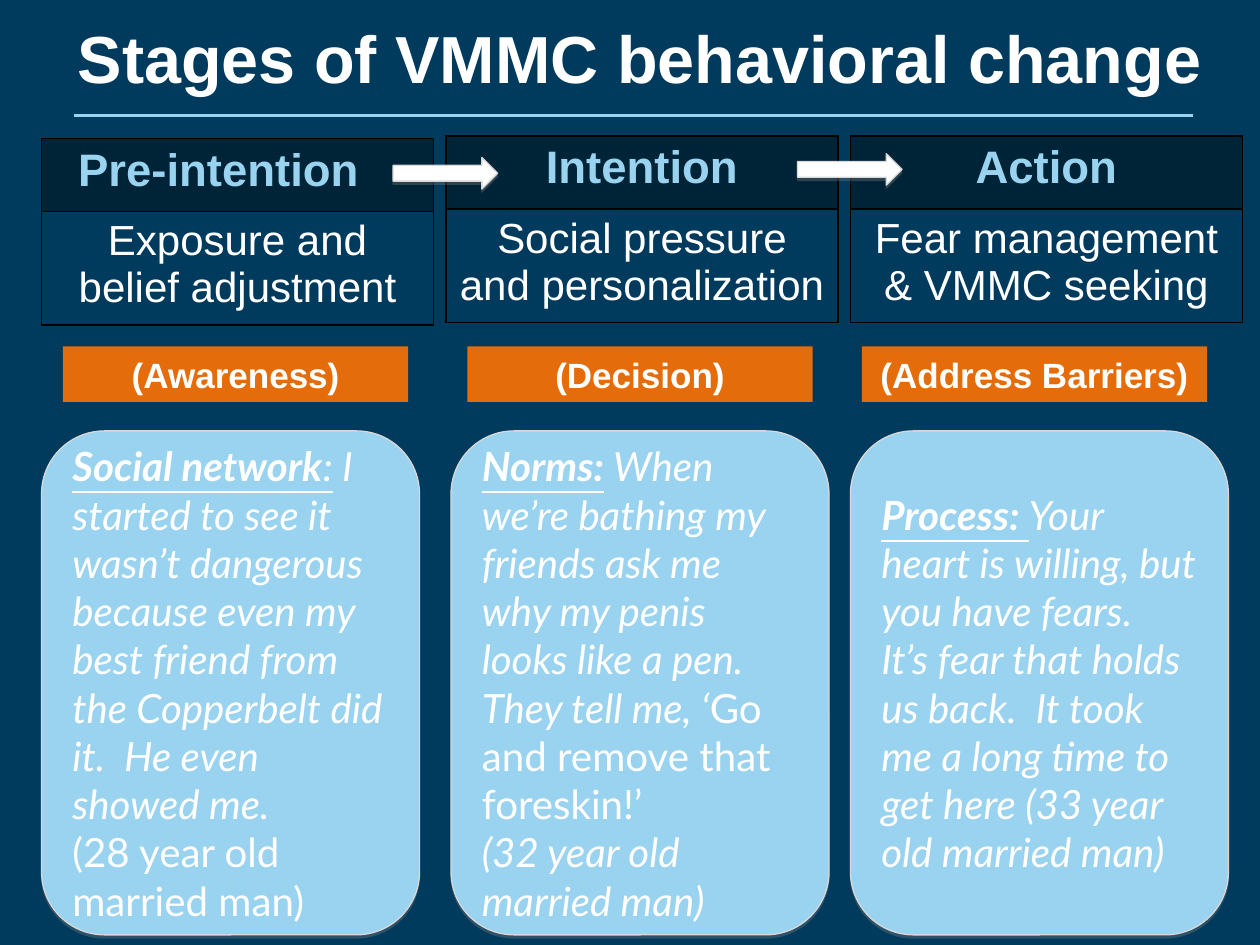
from dataclasses import dataclass

from lxml import etree
from pptx import Presentation
from pptx.dml.color import RGBColor
from pptx.enum.shapes import MSO_CONNECTOR, MSO_SHAPE
from pptx.enum.text import MSO_ANCHOR, MSO_AUTO_SIZE, PP_ALIGN
from pptx.oxml.ns import qn
from pptx.util import Inches, Pt

NAVY = RGBColor(0x00, 0x3A, 0x5D)
DARK = RGBColor(0x00, 0x24, 0x37)
SKY = RGBColor(0x9A, 0xD3, 0xF0)
ORANGE = RGBColor(0xE4, 0x6C, 0x0A)
WHITE = RGBColor(0xFF, 0xFF, 0xFF)
PALE_GREY = RGBColor(0xD8, 0xD8, 0xD8)
GREY = RGBColor(0x80, 0x80, 0x80)
BLACK = RGBColor(0x00, 0x00, 0x00)

RECTANGLE = MSO_SHAPE.RECTANGLE
ROUNDED = MSO_SHAPE.ROUNDED_RECTANGLE
RIGHT_ARROW = MSO_SHAPE.RIGHT_ARROW
STRAIGHT = MSO_CONNECTOR.STRAIGHT
LEFT, CENTER = PP_ALIGN.LEFT, PP_ALIGN.CENTER
MIDDLE = MSO_ANCHOR.MIDDLE
NO_AUTOFIT = MSO_AUTO_SIZE.NONE

TITLE_ONLY_LAYOUT = 5
TABLE_WIDTH = 3.11
ROW_HEIGHTS = (0.58, 0.9)


@dataclass(frozen=True)
class TextRun:
    text: str
    size: float
    font: str = "Arial"
    color: RGBColor = WHITE
    bold: bool = False
    italic: bool = False
    underline: bool = False


@dataclass(frozen=True)
class Stage:
    name: str
    summary: str
    label: str
    quote: list[list[TextRun]]
    table_left: float
    table_top: float
    label_left: float
    quote_left: float
    heading_align: PP_ALIGN = CENTER
    heading_margin: float = 0.1


def quoted(text: str, bold: bool = False, italic: bool = True,
           underline: bool = False) -> TextRun:
    return TextRun(text, 23, "Lato", WHITE, bold, italic, underline)


STAGES = [
    Stage(
        "Pre-intention", "Exposure and belief adjustment", "(Awareness)",
        [[quoted("Social network", bold=True, underline=True),
          quoted(":", underline=True),
          quoted(" I started to see it wasn’t dangerous because even my best "
                 "friend from the Copperbelt did it.  He even showed me.")],
         [quoted("(28 year old married man)", italic=False)]],
        0.33, 1.1, 0.5, 0.33, LEFT, 0.29),
    Stage(
        "Intention", "Social pressure and personalization", "(Decision)",
        [[quoted("Norms:", bold=True, underline=True),
          quoted(" ", bold=True),
          quoted("When we’re bathing my friends ask me why my penis looks "
                 "like a pen.  They tell me, ‘"),
          quoted("Go and remove that foreskin!’", italic=False)],
         [quoted("(32 year old married man)")]],
        3.54, 1.08, 3.71, 3.58),
    Stage(
        "Action", "Fear management & VMMC seeking", "(Address Barriers)",
        [[quoted("Process: ", bold=True, underline=True),
          quoted("Your heart is willing, but you have fears.  It’s fear that "
                 "holds us back.  It took me a long time to get here "
                 "(33 year old married man)")]],
        6.75, 1.08, 6.84, 6.75),
]
ARROWS = [(3.12, 1.25), (6.33, 1.22)]


def write_text(text_frame, paragraphs: list[list[TextRun]], align: PP_ALIGN) -> None:
    for index, runs in enumerate(paragraphs):
        paragraph = text_frame.add_paragraph() if index else text_frame.paragraphs[0]
        paragraph.alignment = align
        for item in runs:
            run = paragraph.add_run()
            run.text = item.text
            font = run.font
            font.name, font.size = item.font, Pt(item.size)
            font.bold, font.italic, font.underline = item.bold, item.italic, item.underline
            font.color.rgb = item.color


def add_solid(parent, color: RGBColor) -> None:
    fill = etree.SubElement(parent, qn("a:solidFill"))
    etree.SubElement(fill, qn("a:srgbClr"), val=str(color))


def add_borders(cell) -> None:
    properties = cell._tc.get_or_add_tcPr()
    for index, side in enumerate(("a:lnL", "a:lnR", "a:lnT", "a:lnB")):
        border = etree.Element(qn(side), w=str(Pt(1)))
        add_solid(border, BLACK)
        properties.insert(index, border)


def add_shape(slide, kind: MSO_SHAPE, left: float, top: float, width: float,
              height: float, color: RGBColor):
    shape = slide.shapes.add_shape(
        kind, Inches(left), Inches(top), Inches(width), Inches(height))
    shape.shadow.inherit = False
    shape.fill.solid()
    shape.fill.fore_color.rgb = color
    shape.line.fill.background()
    shape.text_frame.word_wrap = True
    shape.text_frame.vertical_anchor = MIDDLE
    return shape


def add_raised_edge(shape) -> None:
    shape.line.color.rgb = PALE_GREY
    shape.line.width = Pt(0.75)
    effects = shape._element.spPr.find(qn("a:effectLst"))
    shadow = etree.SubElement(
        effects, qn("a:outerShdw"), blurRad="0", dist=str(Pt(1.8)),
        dir="5400000", rotWithShape="0")
    color = etree.SubElement(shadow, qn("a:srgbClr"), val=str(GREY))
    etree.SubElement(color, qn("a:alpha"), val="35000")


def add_stage_table(slide, stage: Stage) -> None:
    table = slide.shapes.add_table(
        2, 1, Inches(stage.table_left), Inches(stage.table_top),
        Inches(TABLE_WIDTH), Inches(sum(ROW_HEIGHTS))).table
    table.first_row = False
    table.horz_banding = False
    for row, height in zip(table.rows, ROW_HEIGHTS):
        row.height = Inches(height)
    heading, summary = table.cell(0, 0), table.cell(1, 0)
    heading.fill.solid()
    heading.fill.fore_color.rgb = DARK
    heading.margin_left = Inches(stage.heading_margin)
    summary.fill.background()
    write_text(heading.text_frame, [[TextRun(stage.name, 26, color=SKY, bold=True)]],
               stage.heading_align)
    write_text(summary.text_frame, [[TextRun(stage.summary, 24)]], CENTER)
    for cell in (heading, summary):
        add_borders(cell)


def add_stage(slide, stage: Stage) -> None:
    add_stage_table(slide, stage)
    label = add_shape(slide, RECTANGLE, stage.label_left, 2.75, 2.74, 0.44, ORANGE)
    write_text(label.text_frame, [[TextRun(stage.label, 20, bold=True)]], CENTER)
    quote = add_shape(slide, ROUNDED, stage.quote_left, 3.42, 3, 4, SKY)
    add_raised_edge(quote)
    write_text(quote.text_frame, stage.quote, LEFT)


def add_title(slide, text: str) -> None:
    title = slide.shapes.title
    title.left, title.top = Inches(0.33), Inches(-0.17)
    title.width, title.height = Inches(9.5), Inches(1.25)
    title.text_frame.auto_size = NO_AUTOFIT
    title.text_frame.vertical_anchor = MIDDLE
    write_text(title.text_frame, [[TextRun(text, 38, bold=True)]], CENTER)
    rule = slide.shapes.add_connector(
        STRAIGHT, Inches(0.59), Inches(0.92), Inches(9.47), Inches(0.92))
    rule.line.color.rgb = SKY
    rule.line.width = Pt(1.75)
    etree.SubElement(rule._element.spPr, qn("a:effectLst"))


def main() -> None:
    presentation = Presentation()
    presentation.slide_width, presentation.slide_height = Inches(10), Inches(7.5)
    slide = presentation.slides.add_slide(presentation.slide_layouts[TITLE_ONLY_LAYOUT])
    slide.background.fill.solid()
    slide.background.fill.fore_color.rgb = NAVY
    add_title(slide, "Stages of VMMC behavioral change")
    for stage in STAGES:
        add_stage(slide, stage)
    for left, top in ARROWS:
        add_raised_edge(add_shape(slide, RIGHT_ARROW, left, top, 0.83, 0.25, WHITE))
    presentation.save("out.pptx")


if __name__ == "__main__":
    main()
